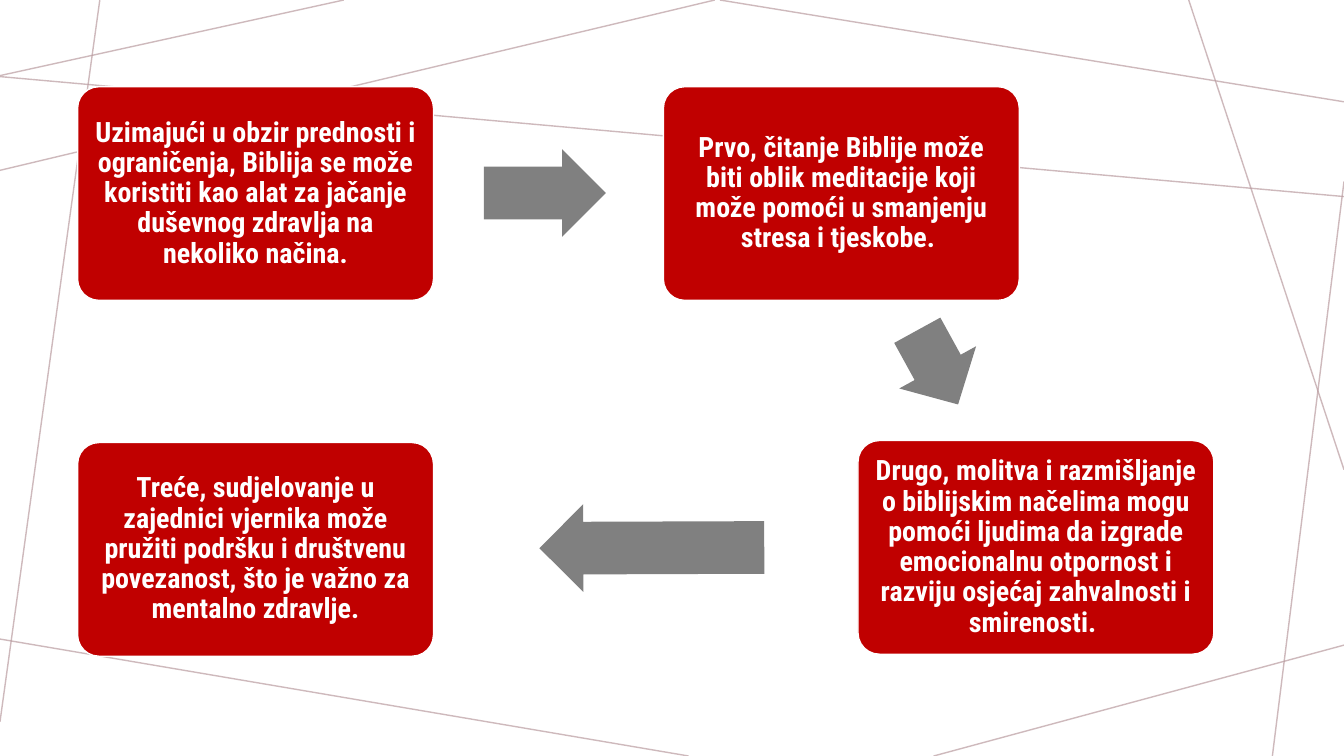
from lxml import etree
from pptx import Presentation
from pptx.dml.color import RGBColor
from pptx.enum.shapes import MSO_CONNECTOR, MSO_SHAPE
from pptx.enum.text import MSO_ANCHOR, PP_ALIGN
from pptx.oxml.ns import qn
from pptx.util import Inches, Pt

STRAIGHT = MSO_CONNECTOR.STRAIGHT
ROUNDED = MSO_SHAPE.ROUNDED_RECTANGLE
RIGHT_ARROW = MSO_SHAPE.RIGHT_ARROW
CENTER = PP_ALIGN.CENTER
MIDDLE = MSO_ANCHOR.MIDDLE

FONT = "Roboto Condensed"
RED, GRAY, WHITE, MAUVE = "C00000", "808080", "FFFFFF", "BA9CA0"
STEP_WIDTH, STEP_HEIGHT = 3.53, 2.12
ARROW_HEIGHT = 0.87

# Start x, start y, end x, end y
BACKGROUND_LINES = [
    (3.41, 0, 0, 0.75),
    (0.99, 0, 0, 7.16),
    (6.83, 7.5, 0, 6.34),
    (13.33, 6.4, 9.26, 7.5),
    (13.33, 1.8, 12.62, 7.5),
    (13.33, 4.66, 11.79, 0),
    (13.33, 1.01, 7.14, 0),
    (0, 1.69, 7.09, 0),
    (0, 0.76, 13.33, 1.95),
]

# Left, top, text
STEPS = [
    (0.77, 0.86, "Uzimajući u obzir prednosti i ograničenja, Biblija se može "
                 "koristiti kao alat za jačanje duševnog zdravlja na nekoliko načina."),
    (6.58, 0.86, "Prvo, čitanje Biblije može biti oblik meditacije koji može "
                 "pomoći u smanjenju stresa i tjeskobe. "),
    (8.51, 4.37, "Drugo, molitva i razmišljanje o biblijskim načelima mogu pomoći "
                 "ljudima da izgrade emocionalnu otpornost i razviju osjećaj "
                 "zahvalnosti i smirenosti. "),
    (0.77, 4.39, "Treće, sudjelovanje u zajednici vjernika može pružiti podršku i "
                 "društvenu povezanost, što je važno za mentalno zdravlje."),
]

# Left, top, width, rotation
ARROWS = [(4.8, 1.48, 1.21, 0), (8.88, 3.21, 0.84, 61.2), (5.35, 5, 2.23, 179.8)]


def rgb(hex_color):
    return RGBColor.from_string(hex_color)


def add_background_line(slide, x1, y1, x2, y2):
    line = slide.shapes.add_connector(
        STRAIGHT, Inches(x1), Inches(y1), Inches(x2), Inches(y2))
    line.line.color.rgb = rgb(MAUVE)
    line.line.width = Pt(1)
    properties = line._element.spPr
    color = properties.find(".//" + qn("a:srgbClr"))
    etree.SubElement(color, qn("a:alpha"), val="70000")
    etree.SubElement(properties, qn("a:effectLst"))


def add_filled_shape(slide, preset, left, top, width, height, fill):
    shape = slide.shapes.add_shape(
        preset, Inches(left), Inches(top), Inches(width), Inches(height))
    shape.shadow.inherit = False
    shape.fill.solid()
    shape.fill.fore_color.rgb = rgb(fill)
    return shape


def add_step(slide, left, top, text):
    step = add_filled_shape(slide, ROUNDED, left, top, STEP_WIDTH, STEP_HEIGHT, RED)
    step.adjustments[0] = 0.1
    step.line.color.rgb = rgb(WHITE)
    step.line.width = Pt(1)
    frame = step.text_frame
    frame.word_wrap = True
    frame.vertical_anchor = MIDDLE
    # The preset's rounded corners already inset its text by 0.06.
    frame.margin_left = frame.margin_right = Inches(0.08)
    frame.margin_top = frame.margin_bottom = Inches(0.08)
    paragraph = frame.paragraphs[0]
    paragraph.alignment = CENTER
    paragraph.line_spacing = 0.9
    run = paragraph.add_run()
    run.text = text
    run.font.name = FONT
    run.font.size = Pt(20)
    run.font.bold = True
    run.font.color.rgb = rgb(WHITE)


def add_arrow(slide, left, top, width, rotation):
    arrow = add_filled_shape(slide, RIGHT_ARROW, left, top, width, ARROW_HEIGHT, GRAY)
    arrow.adjustments[0] = 0.6
    arrow.adjustments[1] = 0.5
    arrow.line.fill.background()
    arrow.rotation = rotation


def main():
    presentation = Presentation()
    presentation.slide_width = Inches(13.33)
    presentation.slide_height = Inches(7.5)
    slide = presentation.slides.add_slide(presentation.slide_layouts[6])
    for line in BACKGROUND_LINES:
        add_background_line(slide, *line)
    for step in STEPS:
        add_step(slide, *step)
    for arrow in ARROWS:
        add_arrow(slide, *arrow)
    presentation.save("out.pptx")


if __name__ == "__main__":
    main()
